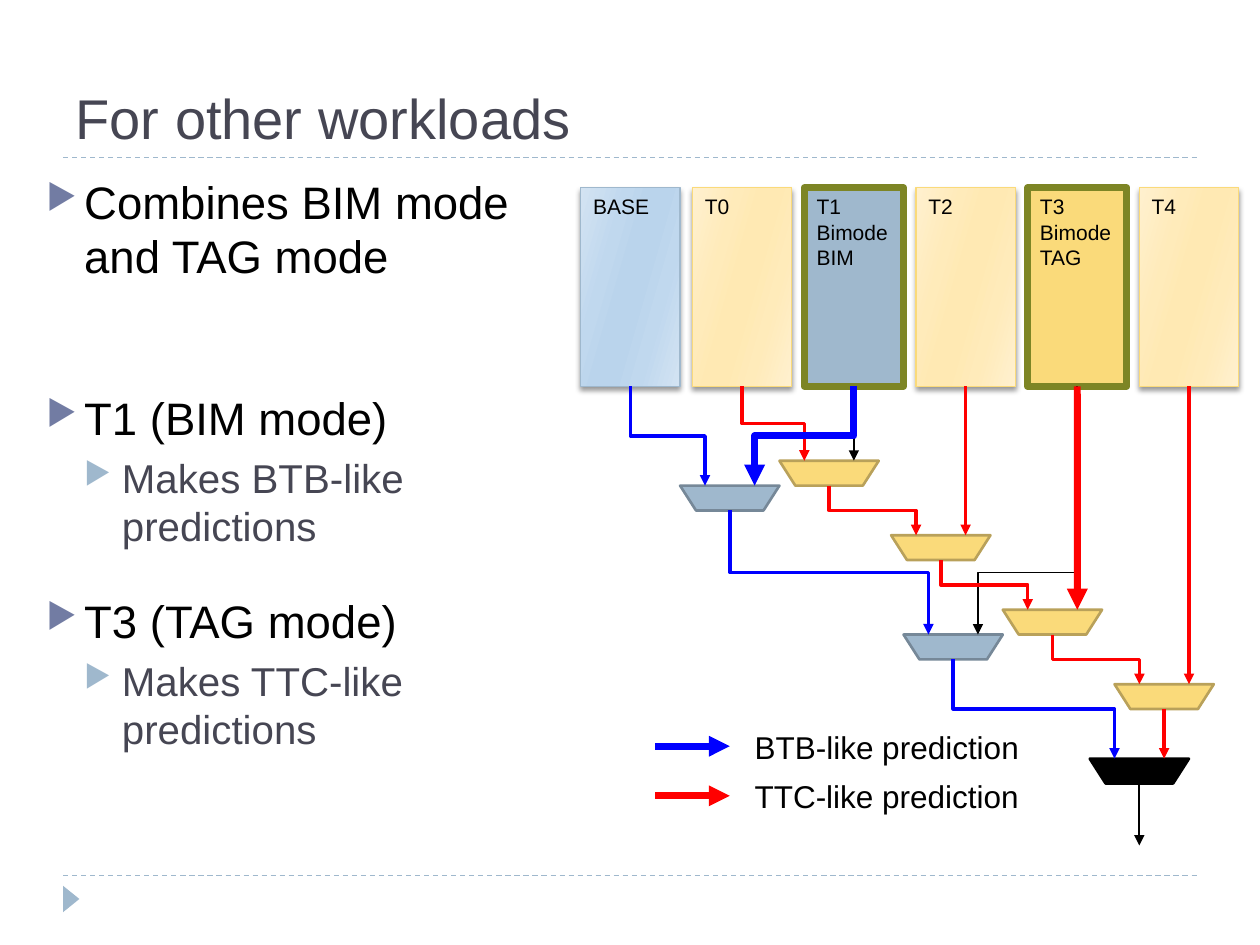
from lxml.etree import SubElement
from pptx import Presentation
from pptx.dml.color import RGBColor
from pptx.enum.dml import MSO_LINE
from pptx.enum.shapes import MSO_CONNECTOR as LINK, MSO_SHAPE as SHAPE
from pptx.enum.text import MSO_ANCHOR as ANCHOR, PP_ALIGN as ALIGN
from pptx.oxml import parse_xml
from pptx.oxml.ns import nsdecls, qn
from pptx.util import Inches, Pt

COLORS = {
    "ink": "464653", "black": "000000", "blue": "0000FF", "red": "FF0000",
    "steel": "9FB8CD", "steel edge": "768898", "gold": "FADA7A",
    "gold edge": "B9A15A", "olive": "7D8525", "violet": "727CA3",
}
SHADES = {"steel": ("D3E3F2", "C0D8EE", "BAD4EC"),
          "gold": ("FFF0CF", "FFEBBA", "FFE9B3")}
FONT = "Arial"
TITLE = "For other workloads"

# Outline: level, text, points of space before
OUTLINE = [
    (0, "Combines BIM mode and TAG mode", 6),
    (0, "T1 (BIM mode)", 61),
    (1, "Makes BTB-like predictions", 5),
    (0, "T3 (TAG mode)", 25),
    (1, "Makes TTC-like predictions", 5),
]
LEVELS = [
    {"size": 26, "color": "black", "bullet": "violet", "indent": 0.3},
    {"size": 23, "color": "ink", "bullet": "steel", "indent": 0.6},
]

# The diagram lies on a grid of square units
UNIT, LEFT, TOP = 0.197, 4.61, 1.49
TABLE_WIDTH, TABLE_HEIGHT, TABLE_PITCH = 4, 8, 4.5
MUX_WIDTH, MUX_HEIGHT = 4, 1

# Tables: lines of text, fill, chosen as bimode
TABLES = [
    (["BASE"], "steel", False),
    (["T0"], "gold", False),
    (["T1", "Bimode", "BIM"], "steel", True),
    (["T2"], "gold", False),
    (["T3", "Bimode", "TAG"], "gold", True),
    (["T4"], "gold", False),
]
# Multiplexers: column, row, fill, edge
MUXES = {
    "base": (4, 12, "steel", "steel edge"),
    "t1": (8, 11, "gold", "gold edge"),
    "t2": (12.5, 14, "gold", "gold edge"),
    "t3": (17, 17, "gold", "gold edge"),
    "t4": (21.5, 20, "gold", "gold edge"),
    "bim": (13, 18, "steel", "steel edge"),
    "final": (20.5, 23, "black", "black"),
}
# Wires: source table or multiplexer, target, input column, color, width, bend
WIRES = [
    ("T0", "t1", 1, "red", 2, 0.5),
    ("T2", "t2", 3, "red", 2, 0.5),
    ("T4", "t4", 3, "red", 2, 0.5),
    ("T3", "bim", 3, "black", 1, 0.75),
    ("BASE", "base", 1, "blue", 2, 0.5),
    ("t1", "t2", 1, "red", 2, 0.5),
    ("t2", "t3", 1, "red", 2, 0.5),
    ("t3", "t4", 1, "red", 2, 0.5),
    ("t4", "final", 3, "red", 2, 0.5),
    ("bim", "final", 1, "blue", 2, 0.5),
    ("base", "bim", 1, "blue", 2, 0.5),
    ("T3", "t3", 3, "red", 4, 0.5),
    ("T1", "t1", 3, "black", 1, 0.5),
    ("T1", "base", 3, "blue", 4, 0.5),
]
LEGEND = [("BTB-like prediction", "blue", 22.5),
          ("TTC-like prediction", "red", 24.5)]


def rgb(name):
    return RGBColor.from_string(COLORS[name])


def grid(column, row):
    return LEFT + column * UNIT, TOP + row * UNIT


def format_font(font, size, color):
    for name, value in {"name": FONT, "size": Pt(size)}.items():
        setattr(font, name, value)
    font.color.rgb = rgb(color)


def add_shape(slide, kind, box, fill, edge=None, width=1):
    shape = slide.shapes.add_shape(kind, *map(Inches, box))
    shape.shadow.inherit = False
    if fill:
        shape.fill.solid()
        shape.fill.fore_color.rgb = rgb(fill)
    if edge:
        shape.line.color.rgb = rgb(edge)
        shape.line.width = Pt(width)
    else:
        shape.line.fill.background()
    return shape


def add_text(slide, box, lines, size, wrap=True):
    frame = slide.shapes.add_textbox(*map(Inches, box)).text_frame
    frame.word_wrap = wrap
    frame.text = "\n".join(lines)
    for paragraph in frame.paragraphs:
        format_font(paragraph.runs[0].font, size, "black")


def add_line(slide, start, end, color, width, arrow=True, bend=0.5):
    """Draw a straight line, or a down-across-down elbow if the ends are not aligned."""
    (x1, y1), (x2, y2) = start, end
    across, down = x2 - x1, y2 - y1
    elbow = min(abs(across), abs(down)) > 0.01
    if elbow:
        # An elbow runs sideways first, so lay it out sideways and turn it
        middle_x, middle_y = (x1 + x2) / 2, (y1 + y2) / 2
        x1, x2 = middle_x - down / 2, middle_x + down / 2
        y1, y2 = middle_y - abs(across) / 2, middle_y + abs(across) / 2
        if across > 0:
            x1, x2 = x2, x1
    line = slide.shapes.add_connector(LINK.ELBOW if elbow else LINK.STRAIGHT,
                                      *map(Inches, (x1, y1, x2, y2)))
    properties = line._element.spPr
    if elbow:
        properties.find(qn("a:xfrm")).set("rot", str((270 if across > 0 else 90) * 60000))
        guides = properties.find(qn("a:prstGeom")).get_or_add_avLst()
        SubElement(guides, qn("a:gd"), name="adj1", fmla=f"val {round(bend * 100000)}")
    line.line.color.rgb = rgb(color)
    line.line.width = Pt(width)
    if arrow:
        SubElement(line.line._get_or_add_ln(), qn("a:tailEnd"), type="triangle")
    SubElement(properties, qn("a:effectLst"))
    return line


def add_glow(shape, shades):
    """Give a shape a slanted gradient and a soft shadow below."""
    outer, middle, inner = shades
    stops = zip((0, 30, 45, 55, 73, 100), (outer, middle, inner, inner, middle, outer))
    marks = "".join(f'<a:gs pos="{place * 1000}"><a:srgbClr val="{color}"/></a:gs>'
                    for place, color in stops)
    properties = shape._element.spPr
    properties.insert(2, parse_xml(
        f'<a:gradFill {nsdecls("a")}><a:gsLst>{marks}</a:gsLst>'
        f'<a:lin ang="{16 * 60000}" scaled="0"/></a:gradFill>'))
    shadow = SubElement(properties.find(qn("a:effectLst")), qn("a:outerShdw"),
                        blurRad=str(Pt(3)), dist=str(Pt(2)), dir=str(90 * 60000),
                        rotWithShape="0")
    color = SubElement(shadow, qn("a:srgbClr"), val=COLORS["black"])
    SubElement(color, qn("a:alpha"), val="40000")


def add_frame(slide):
    for y in (6.95, 1.25):
        rule = add_line(slide, (0.5, y), (9.5, y), "steel", 0.75, arrow=False)
        rule.line.dash_style = MSO_LINE.DASH
    add_shape(slide, SHAPE.ISOSCELES_TRIANGLE, (0.46, 7.07, 0.21, 0.13), "steel").rotation = 90
    title = slide.shapes.title
    box = {"left": 0.5, "top": 0.25, "width": 9, "height": 1}
    for name, value in box.items():
        setattr(title, name, Inches(value))
    title.text_frame.text = TITLE
    title.text_frame.vertical_anchor = ANCHOR.BOTTOM
    paragraph = title.text_frame.paragraphs[0]
    paragraph.alignment = ALIGN.LEFT
    format_font(paragraph.runs[0].font, 32, "ink")


def add_outline(slide):
    frame = slide.shapes.add_textbox(*map(Inches, (0.27, 1.33, 4.63, 5.4))).text_frame
    frame.word_wrap = True
    frame.margin_right = Inches(0.25)
    frame.text = "\n".join(text for _, text, _ in OUTLINE)
    for paragraph, (level, _, space) in zip(frame.paragraphs, OUTLINE):
        style = LEVELS[level]
        paragraph.level = level
        paragraph.space_before = Pt(space)
        format_font(paragraph.runs[0].font, style["size"], style["color"])
        properties = paragraph._p.get_or_add_pPr()
        properties.set("marL", str(Inches(style["indent"])))
        properties.set("indent", str(Inches(-0.3)))
        color = SubElement(properties, qn("a:buClr"))
        SubElement(color, qn("a:srgbClr"), val=COLORS[style["bullet"]])
        SubElement(properties, qn("a:buSzPct"), val="76000")
        SubElement(properties, qn("a:buChar"), char="▶")


def add_diagram(slide):
    outputs, tables = {}, {}
    for index, (lines, fill, bimode) in enumerate(TABLES):
        column = index * TABLE_PITCH
        box = (*grid(column, 0), TABLE_WIDTH * UNIT, TABLE_HEIGHT * UNIT)
        if bimode:
            table = add_shape(slide, SHAPE.RECTANGLE, box, fill, "olive", 4)
        else:
            table = add_shape(slide, SHAPE.RECTANGLE, box, None, fill, 0.75)
            add_glow(table, SHADES[fill])
        add_text(slide, (*box[:3], 0.1 + 0.2 * len(lines)), lines, 12)
        tables[lines[0]] = table
        outputs[lines[0]] = grid(column + TABLE_WIDTH / 2, TABLE_HEIGHT)

    for name, (column, row, fill, edge) in MUXES.items():
        box = (*grid(column, row), MUX_WIDTH * UNIT, MUX_HEIGHT * UNIT)
        mux = add_shape(slide, SHAPE.TRAPEZOID, box, fill, edge, 1.5)
        mux.rotation = 180
        mux.adjustments[0] = 0.64
        outputs[name] = grid(column + MUX_WIDTH / 2, row + MUX_HEIGHT)

    for source, target, port, color, width, bend in WIRES:
        column, row = MUXES[target][:2]
        start, end = outputs[source], grid(column + port, row)
        wire = add_line(slide, start, end, color, width, bend=bend)
        if source in tables and abs(start[0] - end[0]) < 0.01:
            wire.begin_connect(tables[source], 2)
    add_line(slide, outputs["final"], grid(22.5, 26.5), "black", 1)

    for label, color, row in LEGEND:
        add_line(slide, grid(3, row), grid(6, row), color, 4)
        add_text(slide, (*grid(6.5, row - 1), 2.32, 0.4), [label], 18, wrap=False)


def main():
    presentation = Presentation()
    presentation.slide_width, presentation.slide_height = Inches(10), Inches(7.5)
    slide = presentation.slides.add_slide(presentation.slide_layouts[5])
    add_frame(slide)
    add_outline(slide)
    add_diagram(slide)
    presentation.save("out.pptx")


if __name__ == "__main__":
    main()
